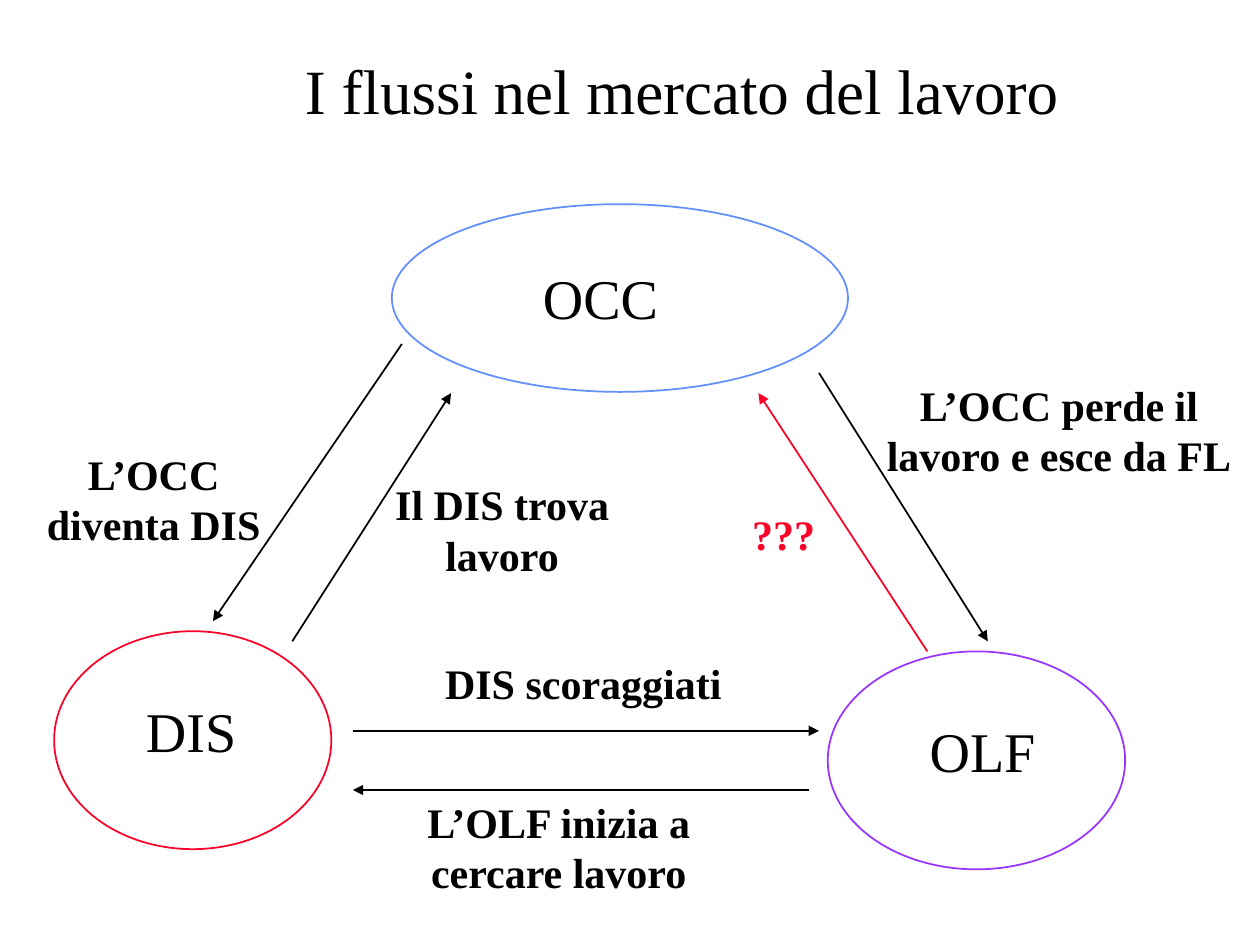
from lxml import etree
from pptx import Presentation
from pptx.dml.color import RGBColor
from pptx.enum.shapes import MSO_CONNECTOR, MSO_SHAPE
from pptx.enum.text import MSO_ANCHOR, MSO_AUTO_SIZE, PP_ALIGN
from pptx.oxml.ns import qn
from pptx.util import Inches, Pt

ELLIPSE, STRAIGHT = MSO_SHAPE.OVAL, MSO_CONNECTOR.STRAIGHT
LEFT, CENTER, TOP = PP_ALIGN.LEFT, PP_ALIGN.CENTER, MSO_ANCHOR.TOP
NO_AUTOFIT = MSO_AUTO_SIZE.NONE
FONT = "Times New Roman"
BLACK, RED, BLUE, PURPLE = "000000", "FC0128", "618FFD", "9933FF"


def rgb(color):
    return RGBColor.from_string(color)


def write(sp, lines, size, color=BLACK, bold=False, align=LEFT, wrap=False):
    """Fill a shape with one paragraph per line."""
    tf = sp.text_frame
    tf.word_wrap = wrap
    tf.auto_size = NO_AUTOFIT
    tf.vertical_anchor = TOP
    for i, line in enumerate(lines):
        p = tf.paragraphs[0] if i == 0 else tf.add_paragraph()
        p.alignment = align
        r = p.add_run()
        r.text = line
        r.font.name = FONT
        r.font.size = Pt(size)
        r.font.bold = bold
        r.font.color.rgb = rgb(color)


prs = Presentation()
prs.slide_width, prs.slide_height = Inches(10), Inches(7.5)
s = prs.slides.add_slide(prs.slide_layouts[5])

title = s.shapes.title
title.left, title.top = Inches(2.32), Inches(0.36)
title.width, title.height = Inches(6.19), Inches(0.7)
write(title, ["I flussi nel mercato del lavoro"], 36)

# Labour market states: ellipse box, outline, name, name box
states = [
    ((3.11, 1.62, 3.62, 1.49), BLUE, "OCC", (4.21, 2.04, 1.12, 0.63)),
    ((0.43, 5.01, 2.2, 1.73), RED, "DIS", (1.06, 5.48, 0.92, 0.63)),
    ((6.57, 5.17, 2.36, 1.73), PURPLE, "OLF", (7.28, 5.64, 1.04, 0.63)),
]
for box, color, name, name_box in states:
    sp = s.shapes.add_shape(ELLIPSE, *map(Inches, box))
    sp.shadow.inherit = False
    sp.fill.background()
    sp.line.color.rgb = rgb(color)
    sp.line.width = Pt(1)
    write(s.shapes.add_textbox(*map(Inches, name_box)), [name], 32)

# Flows between states: start x, y, end x, y, colour
flows = [
    (3.19, 2.73, 1.69, 4.93, BLACK),
    (2.32, 5.09, 3.58, 3.12, BLACK),
    (6.42, 6.27, 2.8, 6.27, BLACK),
    (2.8, 5.8, 6.5, 5.8, BLACK),
    (6.5, 2.96, 7.84, 5.09, BLACK),
    (7.36, 5.17, 6.02, 3.12, RED),
]
for *ends, color in flows:
    arrow = s.shapes.add_connector(STRAIGHT, *map(Inches, ends))
    arrow.line.color.rgb = rgb(color)
    arrow.line.width = Pt(1)
    ln = arrow.line._get_or_add_ln()
    etree.SubElement(ln, qn("a:tailEnd"), type="triangle")
    etree.SubElement(arrow._element.spPr, qn("a:effectLst"))

# Flow labels: box, lines, colour, wrap
labels = [
    ((0.27, 3.51, 1.9, 0.9), ["L’OCC", "diventa DIS"], BLACK, False),
    ((3.03, 3.75, 1.91, 0.9), ["Il DIS trova", "lavoro"], BLACK, False),
    ((3.43, 5.17, 2.4, 0.5), ["DIS scoraggiati"], BLACK, False),
    ((3.27, 6.27, 2.33, 0.9), ["L’OLF inizia a", "cercare lavoro"], BLACK, False),
    ((6.81, 2.96, 3.19, 0.9), ["L’OCC perde il", "lavoro e esce da FL"], BLACK, True),
    ((5.87, 3.99, 0.7, 0.5), ["???"], RED, False),
]
for box, lines, color, wrap in labels:
    label = s.shapes.add_textbox(*map(Inches, box))
    write(label, lines, 24, color, bold=True, align=CENTER, wrap=wrap)

prs.save("out.pptx")
